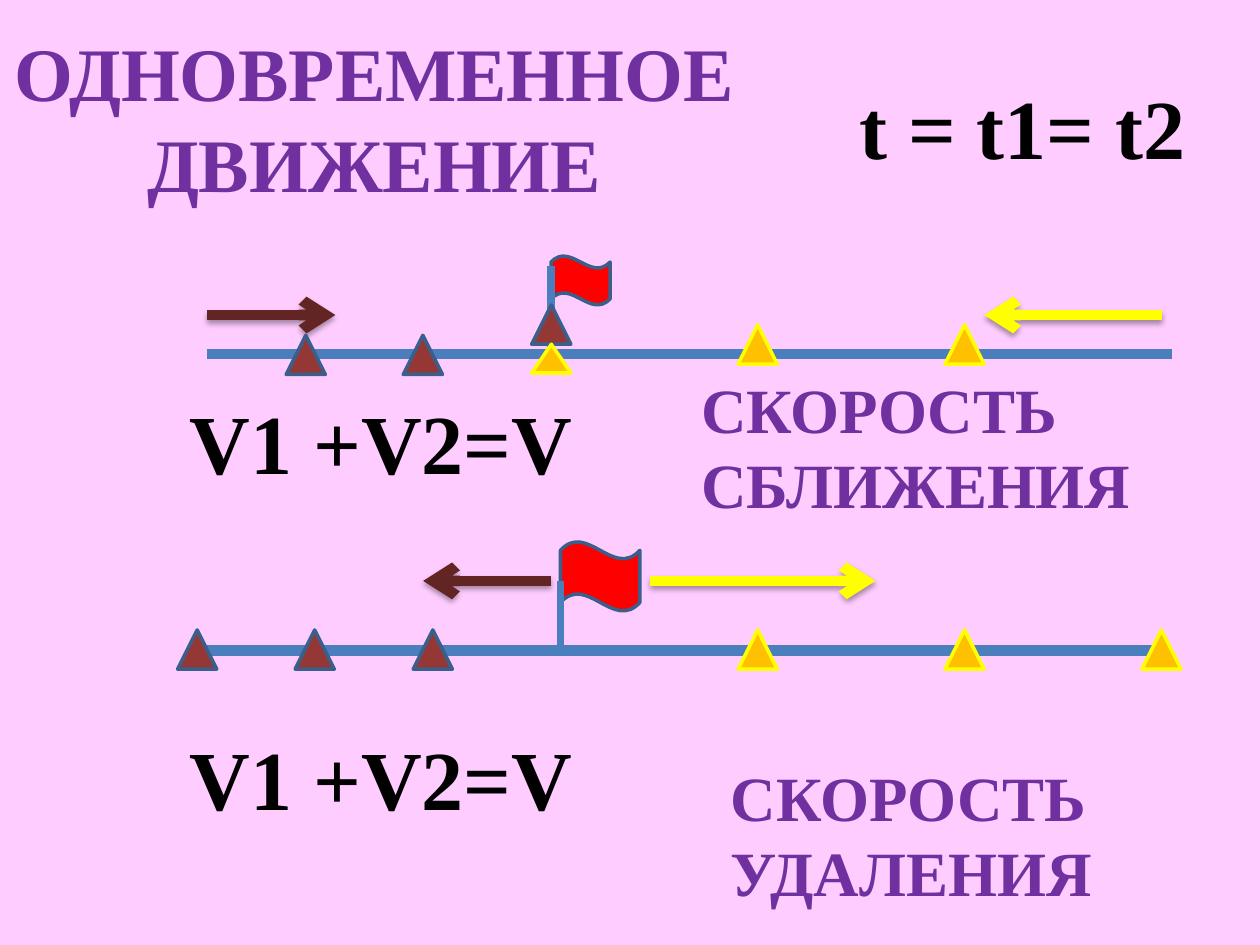
from lxml import etree
from pptx import Presentation, util as u
from pptx.dml.color import RGBColor
from pptx.enum import shapes, text
from pptx.oxml import parse_xml
from pptx.oxml.ns import nsdecls, qn

SHADOW = (
    f'<a:effectLst {nsdecls("a")}>'
    '<a:outerShdw blurRad="40000" dist="23000" dir="5400000" rotWithShape="0">'
    '<a:srgbClr val="000000"><a:alpha val="35000"/></a:srgbClr>'
    '</a:outerShdw></a:effectLst>'
)
PURPLE, BLACK, BLUE, NAVY = "7030A0", "000000", "4B7EBC", "3A5F8C"
MAROON, YELLOW = "632523", "FFFF00"
RED_MARK, GOLD_MARK = ("953735", NAVY), ("FFC000", YELLOW)
MARK = 0.79


def rgb(value):
    return RGBColor.from_string(value)


class Board:
    font = "Times New Roman"

    def __init__(self, prs, background):
        self.s = prs.slides.add_slide(prs.slide_layouts[6])
        fill = self.s.background.fill
        fill.solid()
        fill.fore_color.rgb = rgb(background)

    def label(self, lines, x, y, w, h, size, color=BLACK, title=False):
        sp = self.s.shapes.add_textbox(u.Cm(x), u.Cm(y), u.Cm(w), u.Cm(h))
        tf = sp.text_frame
        tf.word_wrap = True
        if title:
            tf.vertical_anchor = text.MSO_ANCHOR.MIDDLE
        tf.text = lines
        for p in tf.paragraphs:
            p.alignment = text.PP_ALIGN.CENTER if title else text.PP_ALIGN.LEFT
            p.font.name, p.font.size, p.font.bold = self.font, u.Pt(size), True
            p.font.color.rgb = rgb(color)

    def line(self, x1, y1, x2, y2, color=BLUE, width=6, arrow=False):
        sp = self.s.shapes.add_connector(
            shapes.MSO_CONNECTOR.STRAIGHT, u.Cm(x1), u.Cm(y1), u.Cm(x2), u.Cm(y2))
        sp.line.color.rgb = rgb(color)
        sp.line.width = u.Pt(width)
        if arrow:
            etree.SubElement(sp.line._get_or_add_ln(), qn("a:tailEnd"), type="arrow")
        effects = SHADOW if arrow else f'<a:effectLst {nsdecls("a")}/>'
        sp._element.spPr.append(parse_xml(effects))

    def arrow(self, x1, x2, y, color):
        self.line(x1, y, x2, y, color, arrow=True)

    def shape(self, kind, x, y, w, h, fill, outline):
        sp = self.s.shapes.add_shape(kind, u.Cm(x), u.Cm(y), u.Cm(w), u.Cm(h))
        sp.shadow.inherit = False
        sp.fill.solid()
        sp.fill.fore_color.rgb = rgb(fill)
        sp.line.color.rgb = rgb(outline)
        sp.line.width = u.Pt(2)

    def flag(self, x, y, w, h, pole_top, pole_bottom):
        self.shape(shapes.MSO_SHAPE.WAVE, x, y, w, h, "FF0000", NAVY)
        self.line(x, pole_top, x, pole_bottom, width=4.5)

    def marks(self, lefts, y, colors, h=MARK):
        for x in lefts:
            self.shape(shapes.MSO_SHAPE.ISOSCELES_TRIANGLE, x, y, MARK, h, *colors)


def main():
    prs = Presentation()
    prs.slide_width, prs.slide_height = u.Cm(25.4), u.Cm(19.05)
    b = Board(prs, "FFCCFF")

    # Heading and equal times
    b.label("ОДНОВРЕМЕННОЕ ДВИЖЕНИЕ", 0, 0.76, 15.09, 3.18, 43.2, PURPLE, title=True)
    b.label("t = t1= t2", 17.07, 1.4, 7.87, 2.31, 48)

    # Moving towards each other
    b.line(4.17, 7.14, 23.62, 7.14)
    b.arrow(4.17, 6.76, 6.35, MAROON)
    b.arrow(23.42, 19.84, 6.35, YELLOW)
    b.flag(11.11, 5.16, 1.19, 0.99, 5.36, 7.24)
    b.marks([5.77, 8.13], 6.76, RED_MARK)
    b.marks([14.88, 19.05], 6.55, GOLD_MARK)
    b.marks([10.72], 6.15, RED_MARK)
    b.marks([10.72], 6.94, GOLD_MARK, h=0.58)
    b.label("V1 +V2=V", 3.58, 7.75, 9.68, 2.31, 48)
    b.label("СКОРОСТЬ СБЛИЖЕНИЯ", 13.89, 7.34, 9.93, 3.33, 36, PURPLE)

    # Moving apart
    b.line(4.17, 13.11, 23.42, 13.11)
    b.flag(11.3, 10.92, 1.6, 1.4, 11.71, 13.11)
    b.arrow(11.11, 8.53, 11.71, MAROON)
    b.arrow(13.11, 17.65, 11.71, YELLOW)
    b.marks([3.58, 5.95, 8.33], 12.7, RED_MARK)
    b.marks([14.88, 19.05, 23.02], 12.7, GOLD_MARK)
    b.label("V1 +V2=V", 3.58, 14.53, 10.85, 2.31, 48)
    b.label("СКОРОСТЬ\nУДАЛЕНИЯ", 14.48, 15.16, 9.32, 3.33, 36, PURPLE)

    prs.save("out.pptx")


if __name__ == "__main__":
    main()
